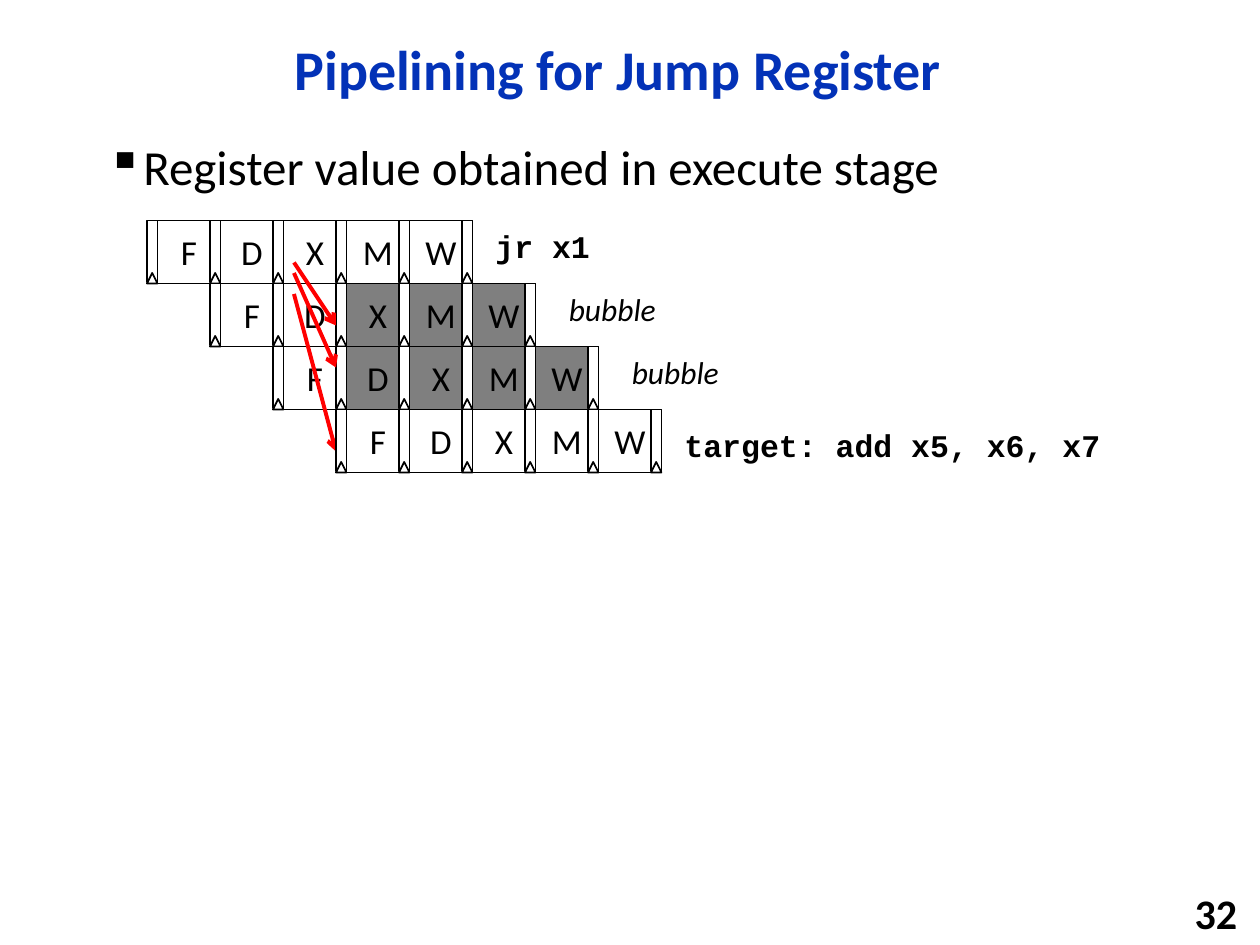
from lxml.etree import SubElement
from pptx import Presentation
from pptx.dml.color import RGBColor
from pptx.enum.shapes import MSO_CONNECTOR, MSO_SHAPE
from pptx.enum.text import MSO_ANCHOR, MSO_AUTO_SIZE, PP_ALIGN
from pptx.oxml.ns import qn
from pptx.util import Pt

SCALE = 9525  # EMU in one px, 96 px to the inch
WHITE = RGBColor(0xFF, 0xFF, 0xFF)
BLACK = RGBColor(0x00, 0x00, 0x00)
GRAY = RGBColor(0x7F, 0x7F, 0x7F)
BLUE = RGBColor(0x03, 0x32, 0xB7)
RED = RGBColor(0xFF, 0x00, 0x00)

CELL, LATCH = 48, 8
STAGES = "FDXMW"

# Text formats
TITLE = {"name": "Calibri", "size": Pt(32), "bold": True}
BODY = {"name": "Calibri", "size": Pt(28)}
PAGE = {"name": "Calibri", "size": Pt(24), "bold": True}
STAGE = {"name": "Calibri", "size": Pt(20)}
CODE = {"name": "Courier New", "size": Pt(18), "bold": True}
NOTE = {"name": "Calibri", "size": Pt(18), "italic": True}

# Rows: first gray stage, label, its format, and its box relative to the row end
ROWS = [
    (5, "jr x1", CODE, (8, 0, 92, 38)),
    (2, "bubble", NOTE, (16, 0, 92, 38)),
    (1, "bubble", NOTE, (16, 0, 92, 38)),
    (5, "target: add x5, x6, x7", CODE, (8, 8, 339, 38)),
]
# Arrows: start and end height, relative to the diagram
ARROWS = [(40, 112), (32, 80), (56, 176)]


def px(*nums):
    return [num * SCALE for num in nums]


def write(shape, text, form, color=BLACK, align=PP_ALIGN.LEFT,
          anchor=MSO_ANCHOR.TOP, wrap=True):
    frame = shape.text_frame
    frame.word_wrap = wrap
    frame.auto_size = MSO_AUTO_SIZE.NONE
    frame.vertical_anchor = anchor
    para = frame.paragraphs[0]
    para.alignment = align
    run = para.add_run()
    run.text = text
    for key, value in form.items():
        setattr(run.font, key, value)
    run.font.color.rgb = color
    return para


def add_text(slide, box, text, form, **more):
    return write(slide.shapes.add_textbox(*px(*box)), text, form, **more)


def add_part(slide, kind, box, fill=WHITE):
    part = slide.shapes.add_shape(kind, *px(*box))
    part.shadow.inherit = False
    part.fill.solid()
    part.fill.fore_color.rgb = fill
    part.line.color.rgb = BLACK
    part.line.width = Pt(1)
    return part


def add_title(slide, box):
    title = slide.shapes.title
    title.left, title.top, title.width, title.height = px(*box)
    para = write(title, "Pipelining for Jump Register", TITLE, color=BLUE,
                 align=PP_ALIGN.CENTER, anchor=MSO_ANCHOR.MIDDLE)
    para.line_spacing = 0.9


def add_body(slide, box):
    para = add_text(slide, box, "Register value obtained in execute stage", BODY)
    para.line_spacing = 0.9
    # Hanging square bullet
    props = para._p.get_or_add_pPr()
    hang, = px(24)
    props.set("marL", str(hang))
    props.set("indent", str(-hang))
    SubElement(props, qn("a:buChar")).set("char", "▪")


def add_latch(slide, left, top):
    add_part(slide, MSO_SHAPE.RECTANGLE, (left, top, LATCH, CELL - 1))
    add_part(slide, MSO_SHAPE.ISOSCELES_TRIANGLE,
             (left, top + CELL - LATCH, LATCH, LATCH))


def add_row(slide, left, top, row):
    gray, text, form, (dx, dy, width, height) = row
    add_latch(slide, left, top)
    for num, stage in enumerate(STAGES):
        edge = left + LATCH + num * CELL
        cell = add_part(slide, MSO_SHAPE.RECTANGLE, (edge, top, CELL, CELL),
                        GRAY if num >= gray else WHITE)
        frame = cell.text_frame
        for side in ("left", "right", "top", "bottom"):
            setattr(frame, f"margin_{side}", 0)
        write(cell, stage, STAGE, align=PP_ALIGN.CENTER, anchor=MSO_ANCHOR.MIDDLE)
        add_latch(slide, edge + CELL - LATCH, top)
    end = left + LATCH + len(STAGES) * CELL
    add_text(slide, (end + dx, top + dy, width, height), text, form, wrap=False)


def add_arrow(slide, x1, y1, x2, y2):
    arrow = slide.shapes.add_connector(MSO_CONNECTOR.STRAIGHT, *px(x1, y1, x2, y2))
    arrow.line.color.rgb = RED
    arrow.line.width = Pt(2.25)
    SubElement(arrow.line._get_or_add_ln(), qn("a:tailEnd")).set("type", "arrow")
    SubElement(arrow._element.spPr, qn("a:effectLst"))


def add_pipeline(slide, left, top):
    for num, row in enumerate(ROWS):
        # The target row lies over the arrow tips
        if num == len(ROWS) - 1:
            for start, end in ARROWS:
                add_arrow(slide, left + 112, top + start, left + 144, top + end)
        add_row(slide, left + num * CELL, top + num * CELL, row)


def main():
    deck = Presentation()
    deck.slide_width, deck.slide_height = px(960, 720)
    slide = deck.slides.add_slide(deck.slide_layouts[5])
    add_title(slide, (88, 16, 766, 78))
    add_body(slide, (72, 104, 806, 531))
    add_text(slide, (752, 680, 200, 31), "32", PAGE,
             align=PP_ALIGN.RIGHT, anchor=MSO_ANCHOR.MIDDLE)
    add_pipeline(slide, 112, 168)
    deck.save("out.pptx")


if __name__ == "__main__":
    main()
